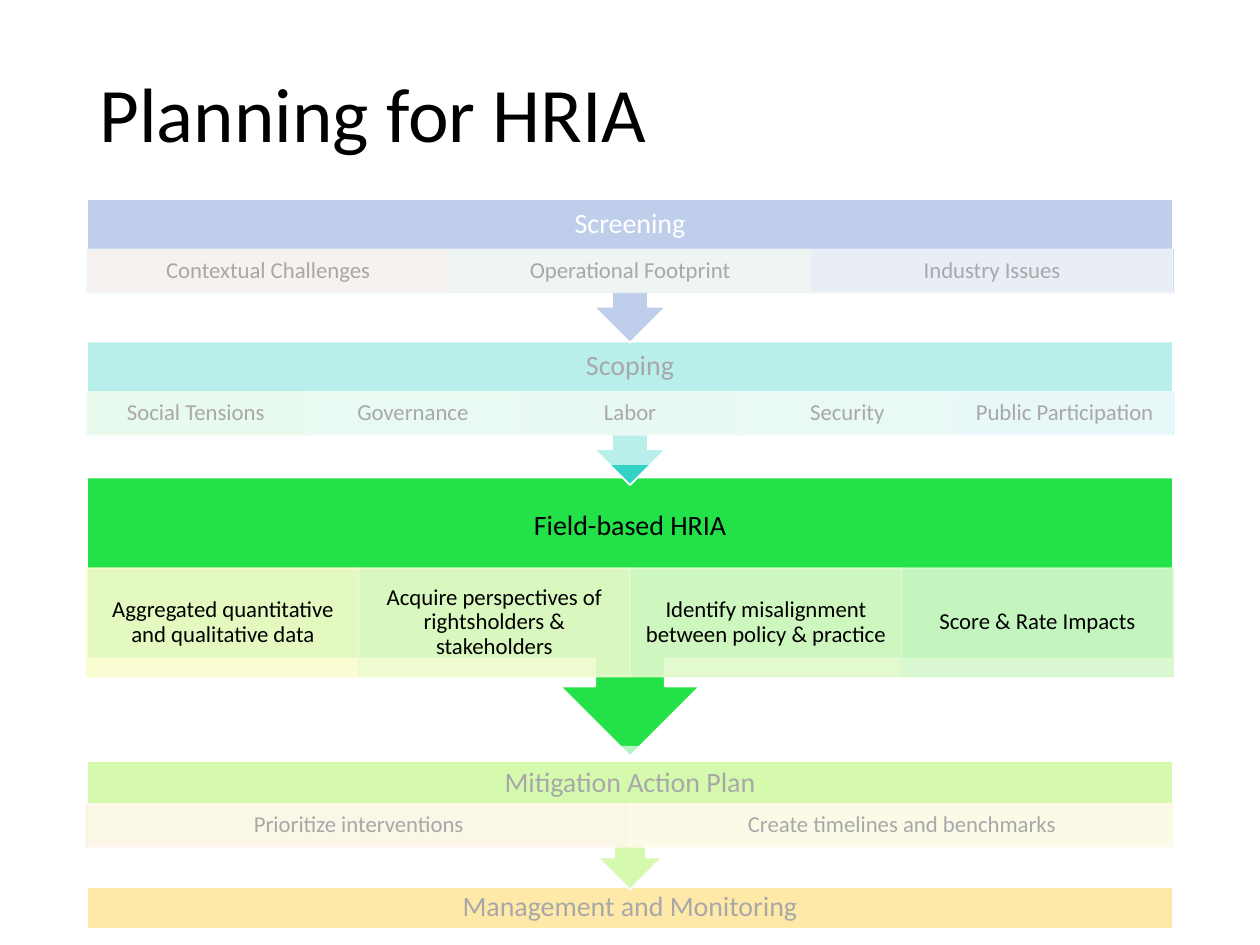
from dataclasses import dataclass
from typing import Optional

from lxml.etree import SubElement
from pptx import Presentation
from pptx.dml.color import RGBColor
from pptx.enum.shapes import MSO_SHAPE
from pptx.enum.text import MSO_ANCHOR, PP_ALIGN
from pptx.oxml.ns import qn
from pptx.util import Inches, Pt

COLORS = {
    "black": "000000", "white": "FFFFFF",
    "screening": "4472C4", "scoping": "33D2C5", "field": "23E148",
    "mitigation": "86F011", "monitoring": "FFC000",
    "context": "FBE5D6", "context_line": "CEE6EE",
    "footprint": "E2F0D9", "footprint_line": "CFDDEC", "industry": "CFD6EA",
    "tensions": "CCF7CE", "governance": "CDF5D8", "labor": "CDF3E1",
    "security": "CDF2E9", "participation": "CEEFF0",
    "data": "FAFCCC", "perspectives": "EDFBCC", "misalignment": "E1FACC",
    "impacts": "D6F8CC", "interventions": "FFE8CC", "timelines": "FEF4CC",
}
WIDTH, HEIGHT = Inches(10), Inches(7.5)
COL, ROW = WIDTH / 100, HEIGHT / 100
LEFT, SPAN = 6.9, 86.2
HEADER_SHARE = 0.35


@dataclass
class Box:
    x: float
    y: float
    w: float
    h: float

    def emu(self) -> tuple:
        return tuple(round(n) for n in (self.x * COL, self.y * ROW,
                                        self.w * COL, self.h * ROW))


@dataclass
class Cell:
    text: str
    fill: str
    line: Optional[str] = None


@dataclass
class Stage:
    text: str
    fill: str
    top: float
    height: float
    cell_top: float = 0
    cell_height: float = 0
    cells: tuple = ()
    ink: str = "black"


STAGES = [
    Stage("Management and Monitoring", "monitoring", 93.87, 4.4),
    Stage("Mitigation Action Plan", "mitigation", 80.53, 13.6, 85.07, 4.53, (
        Cell("Prioritize interventions", "interventions"),
        Cell("Create timelines and benchmarks", "timelines"))),
    Stage("Field-based HRIA", "field", 50.53, 29.47, 60.13, 11.47, (
        Cell("Aggregated quantitative and qualitative data", "data"),
        Cell("Acquire perspectives of rightsholders & stakeholders", "perspectives"),
        Cell("Identify misalignment between policy & practice", "misalignment"),
        Cell("Score & Rate Impacts", "impacts"))),
    Stage("Scoping", "scoping", 36.13, 15.2, 41.47, 4.53, (
        Cell("Social Tensions", "tensions"),
        Cell("Governance", "governance"),
        Cell("Labor", "labor"),
        Cell("Security", "security"),
        Cell("Public Participation", "participation"))),
    Stage("Screening", "screening", 21.07, 15.2, 26.4, 4.53, (
        Cell("Contextual Challenges", "context", "context_line"),
        Cell("Operational Footprint", "footprint", "footprint_line"),
        Cell("Industry Issues", "industry")), "white"),
]
VEILS = [Box(6.9, 78.93, 87.1, 19.47), Box(6, 19.47, 87.1, 29.73)]


def rgb(name: str) -> RGBColor:
    return RGBColor.from_string(COLORS[name])


def set_alpha(fill_parent, percent: int) -> None:
    color = fill_parent.find(qn("a:solidFill"))[0]
    SubElement(color, qn("a:alpha")).set("val", str(percent * 1000))


def add_block(s, kind, box: Box, fill: str, line: Optional[str], alpha: int = 100):
    sp = s.shapes.add_shape(kind, *box.emu())
    sp.shadow.inherit = False
    sp.fill.solid()
    sp.fill.fore_color.rgb = rgb(fill)
    if line:
        sp.line.color.rgb = rgb(line)
        sp.line.width = Pt(1)
    else:
        sp.line.fill.background()
    if alpha < 100:
        set_alpha(sp._element.spPr, alpha)
        if line:
            set_alpha(sp._element.spPr.find(qn("a:ln")), alpha)
    return sp


def write(sp, text: str, size: int, ink: str = "black", side: float = 0.1,
          edge: float = 0.05, align: PP_ALIGN = PP_ALIGN.CENTER) -> None:
    tf = sp.text_frame
    frame = {"word_wrap": True, "vertical_anchor": MSO_ANCHOR.MIDDLE,
             "margin_left": Inches(side), "margin_right": Inches(side),
             "margin_top": Inches(edge), "margin_bottom": Inches(edge)}
    for name, value in frame.items():
        setattr(tf, name, value)
    p = tf.paragraphs[0]
    for name, value in {"alignment": align, "line_spacing": 0.9}.items():
        setattr(p, name, value)
    r = p.add_run()
    r.text = text
    for name, value in {"name": "Calibri", "size": Pt(size)}.items():
        setattr(r.font, name, value)
    r.font.color.rgb = rgb(ink)


def add_stage(s, stage: Stage) -> None:
    body = Box(LEFT, stage.top, SPAN, stage.height)
    if not stage.cells:
        sp = add_block(s, MSO_SHAPE.RECTANGLE, body, stage.fill, "white")
        write(sp, stage.text, 16, stage.ink, 0.12, 0.12)
        return
    callout = add_block(s, MSO_SHAPE.UP_ARROW_CALLOUT, body, stage.fill, "white")
    callout.rotation = 180
    header = Box(LEFT, stage.top, SPAN, stage.height * HEADER_SHARE)
    write(s.shapes.add_textbox(*header.emu()), stage.text, 16, stage.ink, 0.12, 0.12)
    width = SPAN / len(stage.cells)
    for i, cell in enumerate(stage.cells):
        box = Box(LEFT + i * width, stage.cell_top, width, stage.cell_height)
        sp = add_block(s, MSO_SHAPE.RECTANGLE, box, cell.fill,
                       cell.line or cell.fill, 90)
        write(sp, cell.text, 13, edge=0.02)


def main() -> None:
    prs = Presentation()
    prs.slide_width, prs.slide_height = WIDTH, HEIGHT
    s = prs.slides.add_slide(prs.slide_layouts[5])
    title = s.shapes.title
    title.left, title.top, title.width, title.height = Box(
        LEFT, 5.33, SPAN, 14.13).emu()
    write(title, "Planning for HRIA", 44, align=PP_ALIGN.LEFT)
    for stage in STAGES:
        add_stage(s, stage)
    for veil in VEILS:
        add_block(s, MSO_SHAPE.RECTANGLE, veil, "white", None, 66)
    prs.save("out.pptx")


if __name__ == "__main__":
    main()
